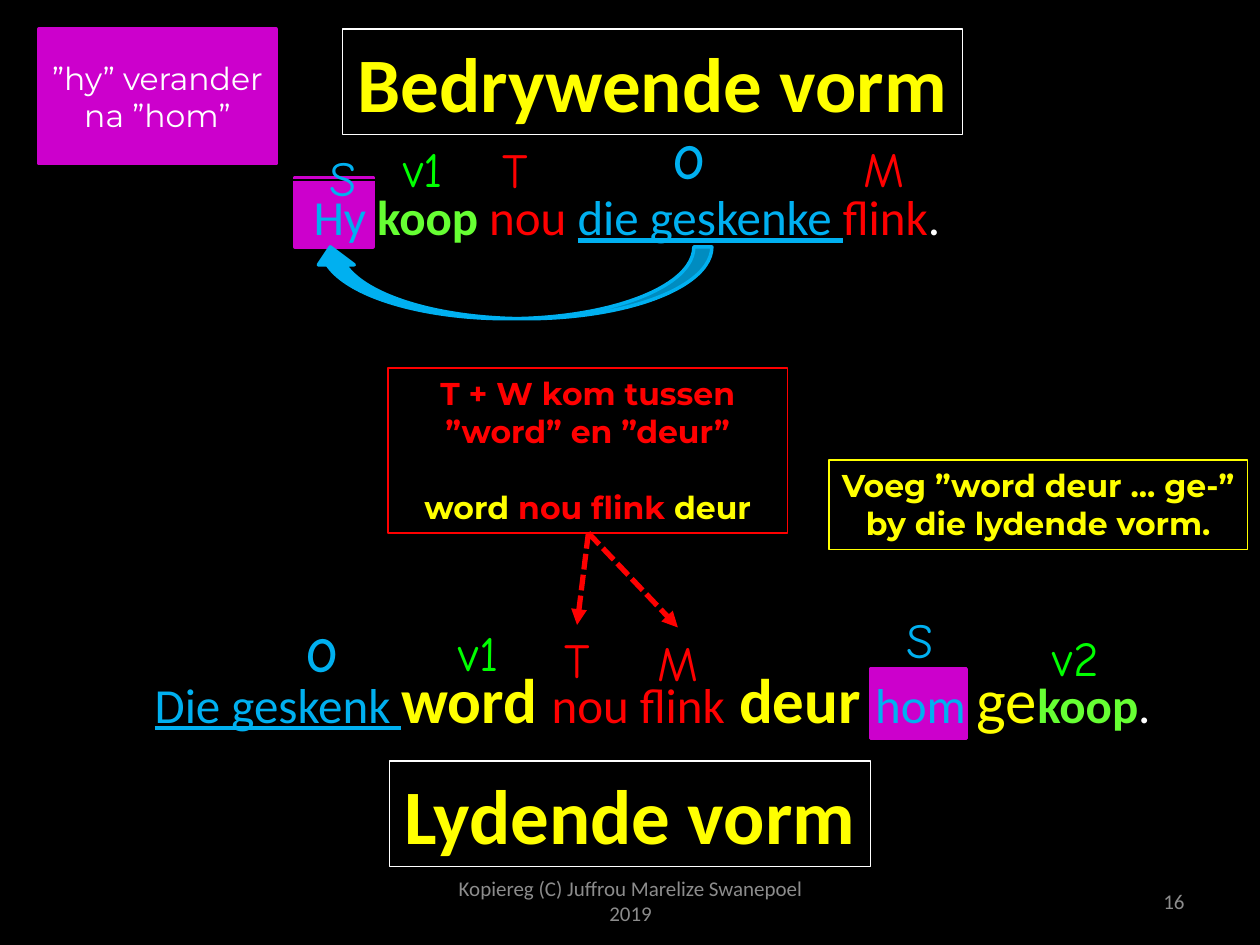
from lxml.etree import SubElement
from pptx import Presentation
from pptx.dml.color import RGBColor
from pptx.enum.dml import MSO_LINE
from pptx.enum.shapes import MSO_CONNECTOR, MSO_SHAPE
from pptx.enum.text import MSO_ANCHOR, MSO_AUTO_SIZE, PP_ALIGN
from pptx.oxml.ns import qn
from pptx.util import Inches, Pt

BLACK = RGBColor(0x00, 0x00, 0x00)
WHITE = RGBColor(0xFF, 0xFF, 0xFF)
GREY = RGBColor(0x8C, 0x8C, 0x8C)
PURPLE = RGBColor(0xCC, 0x00, 0xCC)
BLUE = RGBColor(0x00, 0xB0, 0xF0)
RED = RGBColor(0xFF, 0x00, 0x00)
YELLOW = RGBColor(0xFF, 0xFF, 0x00)
LIME = RGBColor(0x66, 0xFF, 0x33)
GREEN = RGBColor(0x00, 0xFF, 0x00)

BODY, LABEL, NOTE = "Calibri", "Comic Neue", "Montserrat"

HIGHLIGHTS = [(2.34, 1.41, 0.62, 0.55), (6.91, 5.31, 0.76, 0.55)]

# text, size, colour, bold, underline
ACTIVE = [
    ("Hy ", 28, BLUE, False, False),
    ("koop ", 28, LIME, True, False),
    ("nou ", 28, RED, False, False),
    ("die geskenke ", 28, BLUE, False, True),
    ("flink", 28, RED, False, False),
    (".", 28, WHITE, False, False),
]
PASSIVE = [
    ("Die geskenk ", 28, BLUE, False, True),
    ("word ", 36, YELLOW, True, False),
    ("nou flink", 28, RED, False, False),
    (" deur ", 36, YELLOW, True, False),
    ("hom ", 28, BLUE, False, False),
    ("ge", 36, YELLOW, False, False),
    ("koop", 28, LIME, True, False),
    (".", 28, WHITE, False, False),
]
TITLES = [
    ("Bedrywende vorm", (2.72, 0.23, 4.92, 0.84)),
    ("Lydende vorm", (3.09, 6.04, 3.82, 0.84)),
]
CHANGE_NOTE = [("”hy” verander na ”hom”", 18, WHITE, False, False)]
ADD_NOTE = [("Voeg ”word deur ... ge-” by die lydende vorm.", 18, YELLOW, True, False)]
ORDER_NOTE = [("T + W kom tussen ”word” en ”deur”", 18, RED, True, False)]
ORDER_EXAMPLE = [
    ("word", 18, YELLOW, True, False),
    (" nou flink ", 18, RED, True, False),
    ("deur", 18, YELLOW, True, False),
]
LABELS = [
    ("O", 5.09, 1.0, BLUE), ("S", 2.34, 1.13, BLUE),
    ("O", 2.18, 4.91, BLUE), ("S", 6.92, 4.8, BLUE),
    ("v1", 2.98, 1.06, GREEN), ("v2", 8.16, 4.94, GREEN), ("v1", 3.42, 4.9, GREEN),
    ("M", 6.64, 1.06, RED), ("T", 3.71, 1.07, RED),
    ("M", 5.0, 4.98, RED), ("T", 4.2, 4.96, RED),
]
ARROW_START = (4.67, 4.23)
ARROW_ENDS = [(4.58, 4.96), (5.38, 4.98)]
FOOTERS = [
    ("Kopiereg (C) Juffrou Marelize Swanepoel 2019", (3.42, 6.95, 3.17, 0.4), PP_ALIGN.CENTER),
    ("16", (7.17, 6.95, 2.33, 0.4), PP_ALIGN.RIGHT),
]

prs = Presentation()
prs.slide_width, prs.slide_height = Inches(10), Inches(7.5)
s = prs.slides.add_slide(prs.slide_layouts[6])
s.background.fill.solid()
s.background.fill.fore_color.rgb = BLACK


def add_box(at, line, width=0.75, fill=None, kind=MSO_SHAPE.RECTANGLE):
    sp = s.shapes.add_shape(kind, *map(Inches, at))
    sp.shadow.inherit = False
    if fill is None:
        sp.fill.background()
    else:
        sp.fill.solid()
        sp.fill.fore_color.rgb = fill
    sp.line.color.rgb = line
    sp.line.width = Pt(width)
    return sp


def add_text(sp, paragraphs, font, align=PP_ALIGN.CENTER, anchor=MSO_ANCHOR.TOP, wrap=True):
    tf = sp.text_frame
    tf.word_wrap = wrap
    tf.vertical_anchor = anchor
    for i, runs in enumerate(paragraphs):
        p = tf.add_paragraph() if i else tf.paragraphs[0]
        p.alignment = align
        for text, size, color, bold, underline in runs:
            r = p.add_run()
            r.text = text
            r.font.name = font
            r.font.size = Pt(size)
            r.font.color.rgb = color
            r.font.bold = bold
            r.font.underline = underline
    return tf


def add_textbox(at, runs, font, **options):
    return add_text(s.shapes.add_textbox(*map(Inches, at)), [runs], font, **options)


def grow(tf):
    tf.auto_size = MSO_AUTO_SIZE.SHAPE_TO_FIT_TEXT


def outline(r, color, width):
    ln = SubElement(r.font._element, qn("a:ln"), w=str(Pt(width)))
    fill = SubElement(ln, qn("a:solidFill"))
    SubElement(fill, qn("a:srgbClr"), val=str(color))
    r.font._element.insert(0, ln)


for at in HIGHLIGHTS:
    add_box(at, PURPLE, 2, PURPLE)

for text, at, align in FOOTERS:
    add_textbox(at, [(text, 12, GREY, False, False)], BODY, align=align, anchor=MSO_ANCHOR.MIDDLE)

grow(add_text(add_box((0.99, 1.43, 7.97, 0.57), BLACK), [ACTIVE], BODY))
grow(add_textbox((0.68, 5.19, 9, 0.71), PASSIVE, BODY))

for text, at in TITLES:
    tf = add_text(add_box(at, WHITE), [[(text, 44, YELLOW, True, False)]], BODY, wrap=False)
    grow(tf)
    outline(tf.paragraphs[0].runs[0], YELLOW, 0.8)

swap = add_box((2.48, 1.96, 3.17, 0.57), BLUE, 2, BLUE, MSO_SHAPE.CURVED_UP_ARROW)
swap._element.spPr.find(qn("a:xfrm")).set("flipH", "1")

add_text(add_box((0.31, 0.23, 1.88, 1.07), PURPLE, 2, PURPLE), [CHANGE_NOTE], NOTE,
         anchor=MSO_ANCHOR.MIDDLE)
grow(add_text(add_box((6.58, 3.65, 3.32, 0.71), YELLOW), [ADD_NOTE], NOTE))
tf = add_text(add_box((3.08, 2.92, 3.17, 1.31), RED), [ORDER_NOTE, ORDER_EXAMPLE], NOTE)
tf.paragraphs[1].space_before = Pt(22)
grow(tf)

for text, left, top, color in LABELS:
    tf = add_textbox((left, top, 0.76, 0.6), [(text, 28, color, text == "O", False)], LABEL,
                     anchor=MSO_ANCHOR.MIDDLE)
    tf.margin_left = tf.margin_right = tf.margin_top = tf.margin_bottom = Inches(0.1)
    tf.paragraphs[0].line_spacing = 0.9

for end in ARROW_ENDS:
    cx = s.shapes.add_connector(MSO_CONNECTOR.STRAIGHT, *map(Inches, ARROW_START + end))
    cx.line.color.rgb = RED
    cx.line.width = Pt(3)
    cx.line.dash_style = MSO_LINE.SQUARE_DOT
    SubElement(cx.line._get_or_add_ln(), qn("a:tailEnd"), type="triangle")
    SubElement(cx._element.spPr, qn("a:effectLst"))

prs.save("out.pptx")
